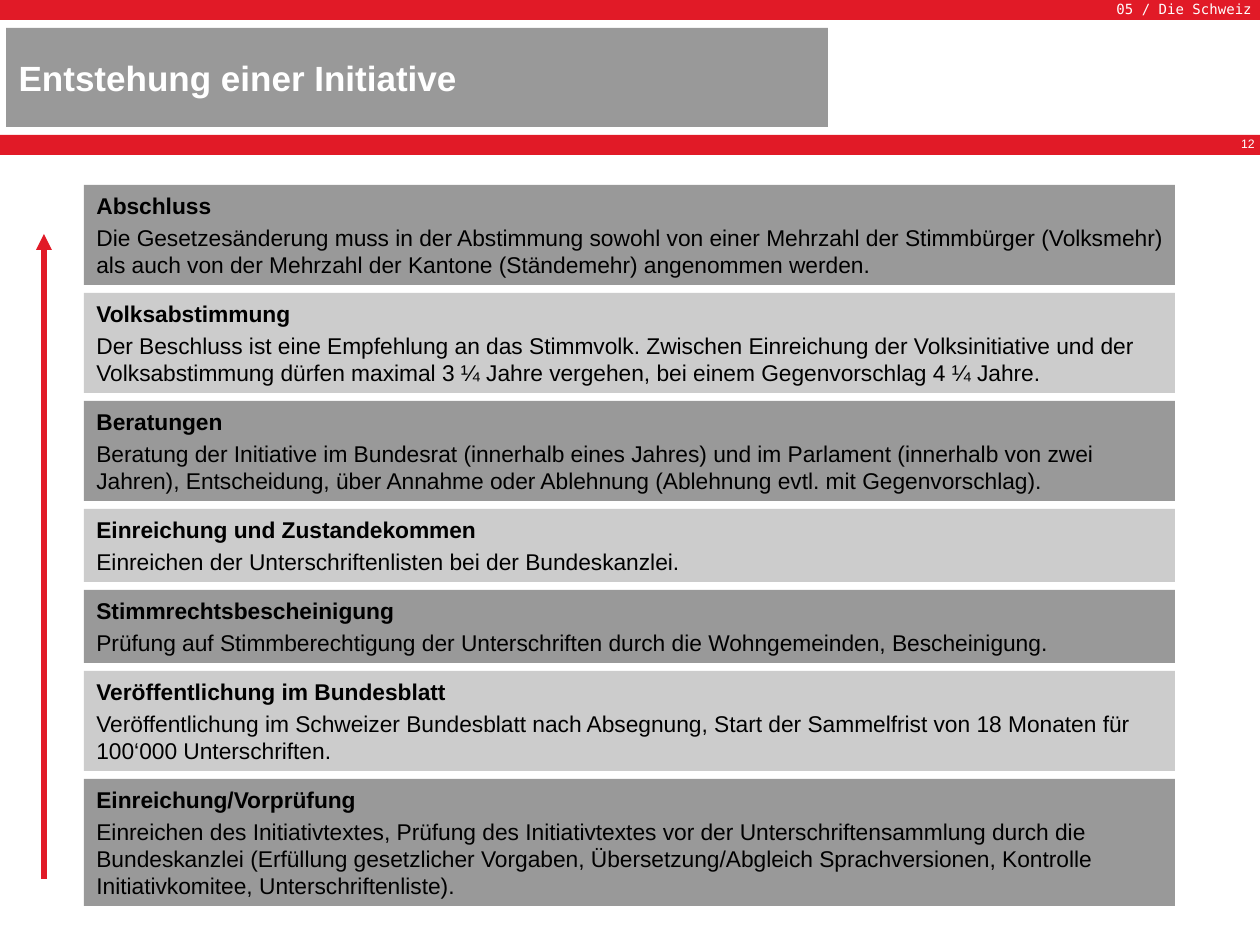
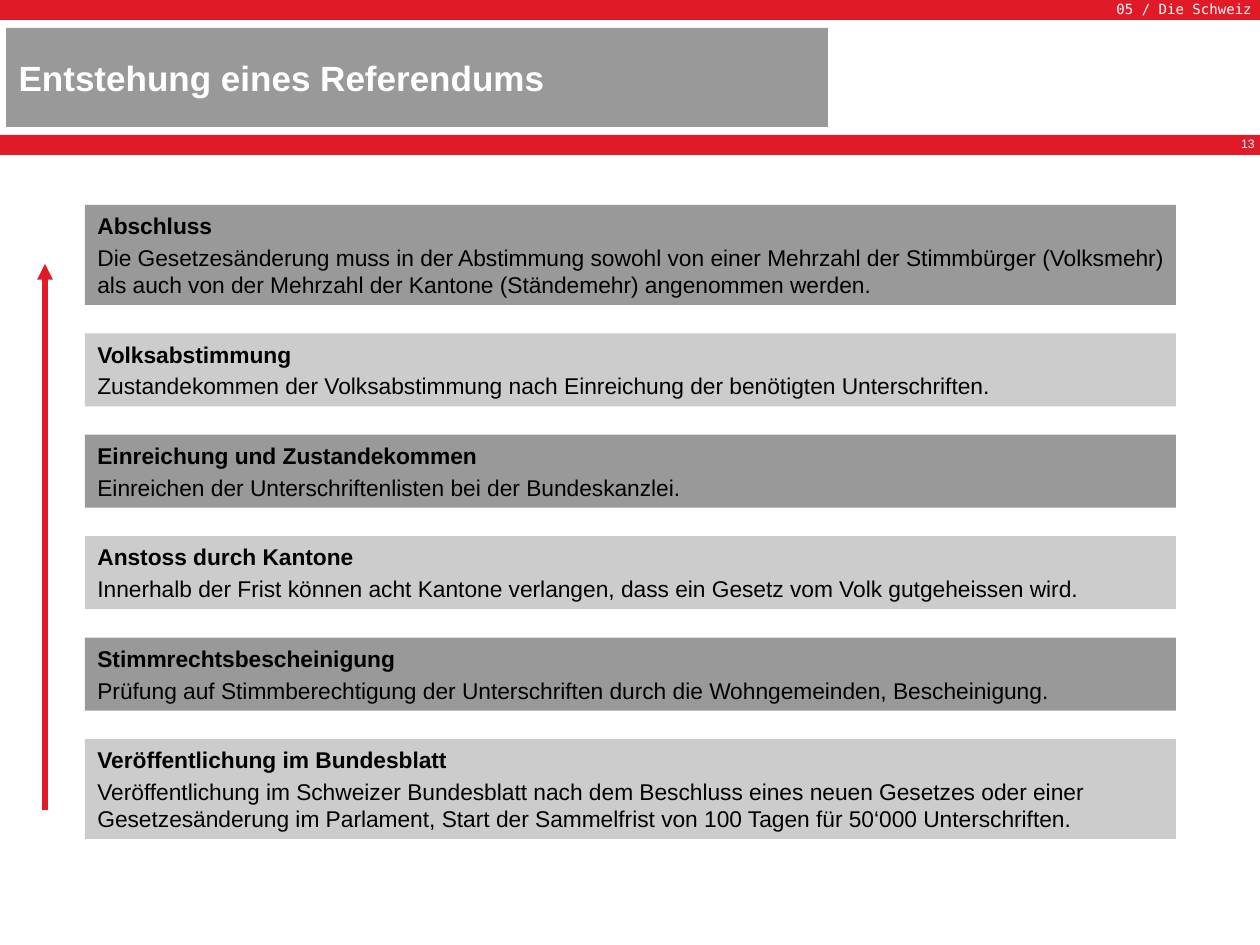
"""Build two slides on how a Swiss initiative and a referendum come about."""
from dataclasses import dataclass

from lxml import etree
from pptx import Presentation
from pptx.dml.color import RGBColor
from pptx.enum.shapes import MSO_CONNECTOR, MSO_SHAPE
from pptx.enum.text import MSO_ANCHOR, MSO_AUTO_SIZE, PP_ALIGN
from pptx.oxml.ns import qn
from pptx.util import Pt

RECTANGLE, STRAIGHT = MSO_SHAPE.RECTANGLE, MSO_CONNECTOR.STRAIGHT
TOP, MIDDLE = MSO_ANCHOR.TOP, MSO_ANCHOR.MIDDLE
LEFT, RIGHT = PP_ALIGN.LEFT, PP_ALIGN.RIGHT
NO_AUTOFIT = MSO_AUTO_SIZE.NONE
EMU_PER_PX = 914400 / 126
TITLE_ONLY = 5


@dataclass(frozen=True)
class Theme:
    """Colours, fonts and type sizes shared by the slides."""
    red: str = "E11A27"
    dark: str = "999999"
    light: str = "CCCCCC"
    white: str = "FFFFFF"
    black: str = "000000"
    sans: str = "Arial"
    mono: str = "DejaVu Sans Mono"
    title_size: int = 20
    step_size: int = 13
    chapter_size: int = 8
    number_size: int = 7
    step_gap: float = 2.6
    arrow_width: int = 3


THEME = Theme()
SLIDE_SIZE = (1260, 945)
CHAPTER = "05 / Die Schweiz"
TITLE_BOX = (6, 28, 822, 99)
CHAPTER_BAND = (0, 0, 1260, 20)
NUMBER_BAND = (0, 135, 1260, 20)
NUMBER_BOX = (973, 130, 294, 66)
ONE_LINE_HEIGHT, EXTRA_LINE_HEIGHT = 73, 27

CLOSING = ("Abschluss", 2, "Die Gesetzesänderung muss in der Abstimmung sowohl von einer "
           "Mehrzahl der Stimmbürger (Volksmehr) als auch von der Mehrzahl der Kantone "
           "(Ständemehr) angenommen werden.")
SUBMISSION = ("Einreichung und Zustandekommen", 1,
              "Einreichen der Unterschriftenlisten bei der Bundeskanzlei.")
CERTIFICATION = ("Stimmrechtsbescheinigung", 1, "Prüfung auf Stimmberechtigung der "
                 "Unterschriften durch die Wohngemeinden, Bescheinigung.")

INITIATIVE = {
    "title": "Entstehung einer Initiative",
    "number": 12,
    "stack": (84, 185, 1091, 721),
    "arrow": (44, 234, 645),
    "steps": [
        CLOSING,
        ("Volksabstimmung", 2, "Der Beschluss ist eine Empfehlung an das Stimmvolk. Zwischen "
         "Einreichung der Volksinitiative und der Volksabstimmung dürfen maximal 3 ¼ Jahre "
         "vergehen, bei einem Gegenvorschlag 4 ¼ Jahre."),
        ("Beratungen", 2, "Beratung der Initiative im Bundesrat (innerhalb eines Jahres) und im "
         "Parlament (innerhalb von zwei Jahren), Entscheidung, über Annahme oder Ablehnung "
         "(Ablehnung evtl. mit Gegenvorschlag)."),
        SUBMISSION,
        CERTIFICATION,
        ("Veröffentlichung im Bundesblatt", 2, "Veröffentlichung im Schweizer Bundesblatt nach "
         "Absegnung, Start der Sammelfrist von 18 Monaten für 100‘000 Unterschriften."),
        ("Einreichung/Vorprüfung", 3, "Einreichen des Initiativtextes, Prüfung des "
         "Initiativtextes vor der Unterschriftensammlung durch die Bundeskanzlei (Erfüllung "
         "gesetzlicher Vorgaben, Übersetzung/Abgleich Sprachversionen, Kontrolle "
         "Initiativkomitee, Unterschriftenliste)."),
    ],
}
REFERENDUM = {
    "title": "Entstehung eines Referendums",
    "number": 13,
    "stack": (85, 205, 1091, 634),
    "arrow": (45, 264, 546),
    "steps": [
        CLOSING,
        ("Volksabstimmung", 1, "Zustandekommen der Volksabstimmung nach Einreichung der "
         "benötigten Unterschriften."),
        SUBMISSION,
        ("Anstoss durch Kantone", 1, "Innerhalb der Frist können acht Kantone verlangen, dass "
         "ein Gesetz vom Volk gutgeheissen wird."),
        CERTIFICATION,
        ("Veröffentlichung im Bundesblatt", 2, "Veröffentlichung im Schweizer Bundesblatt nach "
         "dem Beschluss eines neuen Gesetzes oder einer Gesetzesänderung im Parlament, Start "
         "der Sammelfrist von 100 Tagen für 50‘000 Unterschriften."),
    ],
}


def px(*lengths):
    """Turn pixel lengths into a list of EMU."""
    return [round(length * EMU_PER_PX) for length in lengths]


def assign(target, values):
    """Set each attribute in values on target."""
    for key, value in values.items():
        setattr(target, key, value)


def paint(shape, color):
    """Fill a shape with a plain colour."""
    shape.fill.solid()
    shape.fill.fore_color.rgb = RGBColor.from_string(color)
    shape.line.fill.background()


def write(frame, paragraphs, color, size, font=THEME.sans, align=LEFT, **frame_format):
    """Write (text, bold) paragraphs into a text frame."""
    assign(frame, {"word_wrap": True, "auto_size": NO_AUTOFIT, **frame_format})
    for index, (text, bold) in enumerate(paragraphs):
        paragraph = frame.add_paragraph() if index else frame.paragraphs[0]
        paragraph.text = text
        paragraph.alignment = align
        paragraph.space_before = Pt(THEME.step_gap if index else 0)
        assign(paragraph.font, {"name": font, "size": Pt(size), "bold": bold})
        paragraph.font.color.rgb = RGBColor.from_string(color)


def add_block(slide, box, color):
    """Add a borderless rectangle."""
    block = slide.shapes.add_shape(RECTANGLE, *px(*box))
    block.shadow.inherit = False
    paint(block, color)
    return block


def add_header(slide, title, number):
    """Add the red bands, the chapter, the title and the page number."""
    chapter = add_block(slide, CHAPTER_BAND, THEME.red)
    side, edge = px(8, 1)
    write(chapter.text_frame, [(CHAPTER, False)], THEME.white, THEME.chapter_size,
          THEME.mono, RIGHT, vertical_anchor=TOP, margin_left=side, margin_right=side,
          margin_top=edge, margin_bottom=edge)
    add_block(slide, NUMBER_BAND, THEME.red)

    heading = slide.shapes.title
    assign(heading, dict(zip(("left", "top", "width", "height"), px(*TITLE_BOX))))
    paint(heading, THEME.dark)
    write(heading.text_frame, [(title, True)], THEME.white, THEME.title_size,
          vertical_anchor=MIDDLE)

    page = slide.shapes.add_textbox(*px(*NUMBER_BOX))
    write(page.text_frame, [(str(number), False)], THEME.white, THEME.number_size,
          align=RIGHT, vertical_anchor=TOP)


def add_arrow(slide, x, top, length):
    """Add the upward arrow beside the steps."""
    arrow = slide.shapes.add_connector(STRAIGHT, *px(x, top + length, x, top))
    arrow.line.color.rgb = RGBColor.from_string(THEME.red)
    arrow.line.width = Pt(THEME.arrow_width)
    properties = arrow.element.spPr
    etree.SubElement(properties.find(qn("a:ln")), qn("a:tailEnd"), type="triangle")
    etree.SubElement(properties, qn("a:effectLst"))


def add_steps(slide, box, steps):
    """Stack the steps in the box with equal gaps and alternating greys."""
    left, top, width, height = box
    heights = [ONE_LINE_HEIGHT + EXTRA_LINE_HEIGHT * (lines - 1) for _, lines, _ in steps]
    gap = (height - sum(heights)) / (len(steps) - 1)
    for index, ((name, _, detail), step_height) in enumerate(zip(steps, heights)):
        color = THEME.light if index % 2 else THEME.dark
        step = add_block(slide, (left, top, width, step_height), color)
        write(step.text_frame, [(name, True), (detail, False)], THEME.black,
              THEME.step_size, vertical_anchor=MIDDLE)
        top += step_height + gap


def add_process_slide(deck, content):
    """Add one slide that shows a process from bottom to top."""
    slide = deck.slides.add_slide(deck.slide_layouts[TITLE_ONLY])
    add_header(slide, content["title"], content["number"])
    add_arrow(slide, *content["arrow"])
    add_steps(slide, content["stack"], content["steps"])


def main():
    """Build and save the deck."""
    deck = Presentation()
    deck.slide_width, deck.slide_height = px(*SLIDE_SIZE)
    for content in (INITIATIVE, REFERENDUM):
        add_process_slide(deck, content)
    deck.save("out.pptx")


if __name__ == "__main__":
    main()
